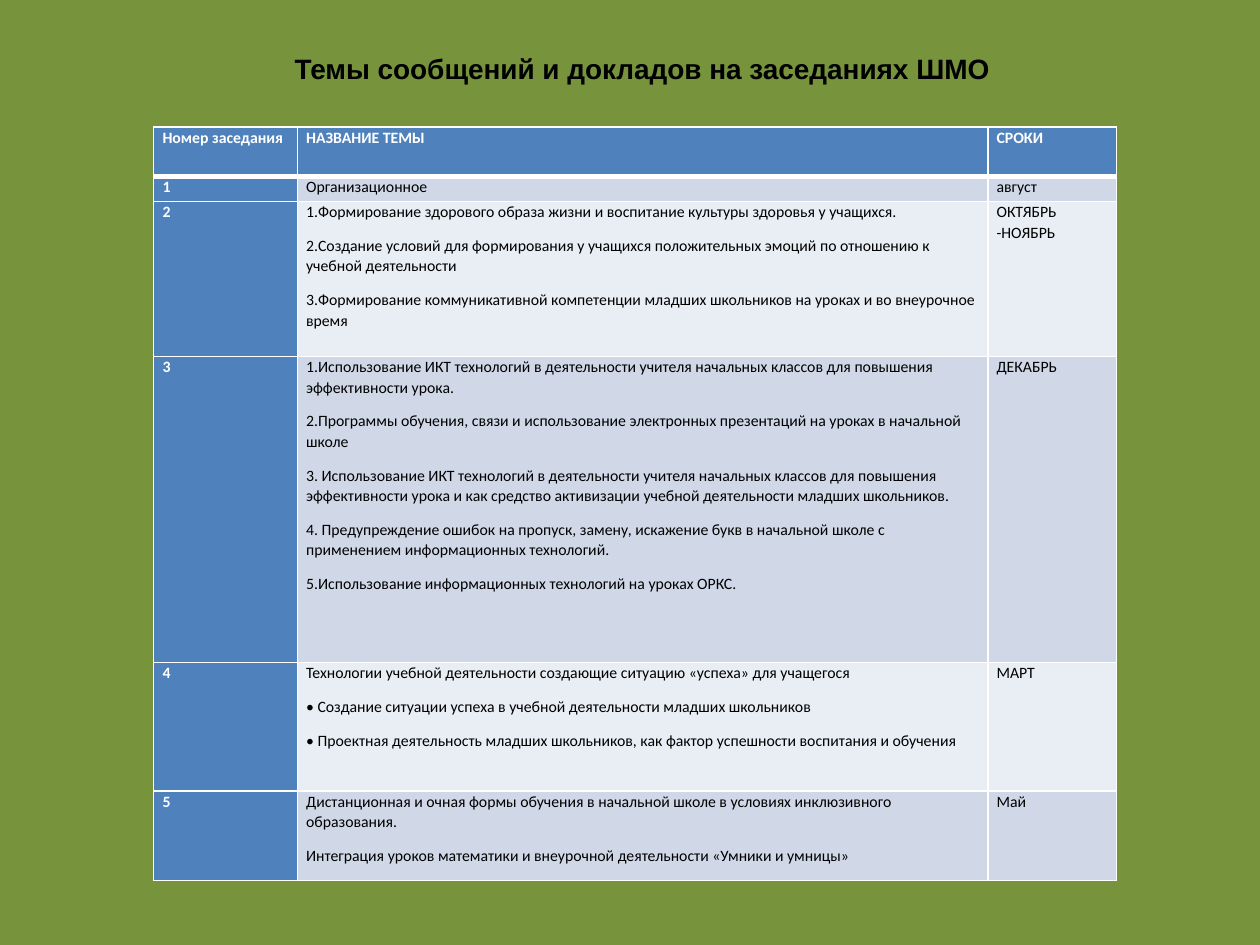
from dataclasses import dataclass

from lxml import etree
from pptx import Presentation
from pptx.dml.color import RGBColor
from pptx.enum.text import MSO_ANCHOR
from pptx.oxml.ns import qn
from pptx.util import Inches, Pt

TOP = MSO_ANCHOR.TOP


@dataclass(frozen=True)
class Theme:
    back: str = "77933C"
    head: str = "4F81BD"
    bands: tuple[str, str] = ("D0D8E8", "E9EDF4")
    light: str = "FFFFFF"
    dark: str = "000000"
    title_font: str = "Arial"
    font: str = "Calibri"
    title_size: float = 16
    size: float = 9
    line: float = 1
    thick: float = 3


@dataclass(frozen=True)
class Row:
    high: float
    label: str
    topics: tuple[str, ...]
    term: str


THEME = Theme()
COLS = (1.14, 5.48, 1.02)
ROWS = (
    Row(0.39, "Номер заседания", ("НАЗВАНИЕ ТЕМЫ",), "СРОКИ"),
    Row(0.2, "1", ("Организационное",), "август"),
    Row(1.23, "2", (
        "1.Формирование здорового образа жизни и воспитание культуры здоровья у учащихся.",
        "2.Создание условий для формирования у учащихся положительных эмоций "
        "по отношению к учебной деятельности",
        "3.Формирование коммуникативной компетенции младших школьников "
        "на уроках и во внеурочное время",
    ), "ОКТЯБРЬ -НОЯБРЬ"),
    Row(2.43, "3", (
        "1.Использование ИКТ технологий в деятельности учителя начальных классов "
        "для повышения эффективности урока.",
        "2.Программы обучения, связи и использование электронных презентаций "
        "на уроках в начальной школе",
        "3. Использование ИКТ технологий в деятельности учителя начальных классов "
        "для повышения эффективности урока и как средство активизации "
        "учебной деятельности младших школьников.",
        "4. Предупреждение ошибок на пропуск, замену, искажение букв "
        "в начальной школе с применением информационных технологий.",
        "5.Использование информационных технологий на уроках ОРКС.",
    ), "ДЕКАБРЬ"),
    Row(1.02, "4", (
        "Технологии учебной деятельности создающие ситуацию «успеха» для учащегося",
        "• Создание ситуации успеха в учебной деятельности младших школьников",
        "• Проектная деятельность младших школьников, "
        "как фактор успешности воспитания и обучения",
    ), "МАРТ"),
    Row(0.71, "5", (
        "Дистанционная и очная формы обучения в начальной школе "
        "в условиях инклюзивного образования.",
        "Интеграция уроков математики и внеурочной деятельности «Умники и умницы»",
    ), "Май"),
)


def style(font, name: str, size: float, color: str, bold: bool) -> None:
    font.name, font.size, font.bold = name, Pt(size), bold
    font.color.rgb = RGBColor.from_string(color)


def add_edge(cell, side: str, width: float) -> None:
    line = etree.SubElement(cell._tc.get_or_add_tcPr(), qn(f"a:ln{side}"),
                            w=str(Pt(width)))
    fill = etree.SubElement(line, qn("a:solidFill"))
    etree.SubElement(fill, qn("a:srgbClr"), val=THEME.light)


def fill_cell(cell, texts: tuple[str, ...], row: int, col: int) -> None:
    strong = row == 0 or col == 0
    # Borders, with a thick rule under the header
    thick = {"B": 0, "T": 1}
    for side in "LRTB":
        add_edge(cell, side, THEME.thick if thick.get(side) == row else THEME.line)
    cell.fill.solid()
    cell.fill.fore_color.rgb = RGBColor.from_string(
        THEME.head if strong else THEME.bands[(row - 1) % 2])
    cell.margin_left = cell.margin_right = Inches(0.07)
    cell.margin_top = cell.margin_bottom = 0
    cell.vertical_anchor = TOP
    # Text
    frame = cell.text_frame
    frame.text = "\n".join(texts)
    for para in frame.paragraphs:
        para.line_spacing, para.space_after = 1.07, Pt(7.5)
        style(para.font, THEME.font, THEME.size,
              THEME.light if strong else THEME.dark, strong)


def add_title(slide, text: str) -> None:
    box = slide.shapes.add_textbox(Inches(2.24), Inches(0.36),
                                   Inches(5.79), Inches(0.67))
    frame = box.text_frame
    frame.word_wrap, frame.vertical_anchor = True, TOP
    frame.text = text
    style(frame.paragraphs[0].font, THEME.title_font, THEME.title_size,
          THEME.dark, True)


def add_plan(slide) -> None:
    table = slide.shapes.add_table(
        len(ROWS), len(COLS), Inches(1.22), Inches(1.01),
        Inches(sum(COLS)), Inches(sum(row.high for row in ROWS))).table
    for col, wide in zip(table.columns, COLS):
        col.width = Inches(wide)
    for r, row in enumerate(ROWS):
        table.rows[r].height = Inches(row.high)
        for c, texts in enumerate(((row.label,), row.topics, (row.term,))):
            fill_cell(table.cell(r, c), texts, r, c)


def main() -> None:
    deck = Presentation()
    deck.slide_width, deck.slide_height = Inches(10), Inches(7.5)
    slide = deck.slides.add_slide(deck.slide_layouts[6])
    slide.background.fill.solid()
    slide.background.fill.fore_color.rgb = RGBColor.from_string(THEME.back)
    add_title(slide, "Темы сообщений и докладов на заседаниях ШМО")
    add_plan(slide)
    deck.save("out.pptx")


if __name__ == "__main__":
    main()
